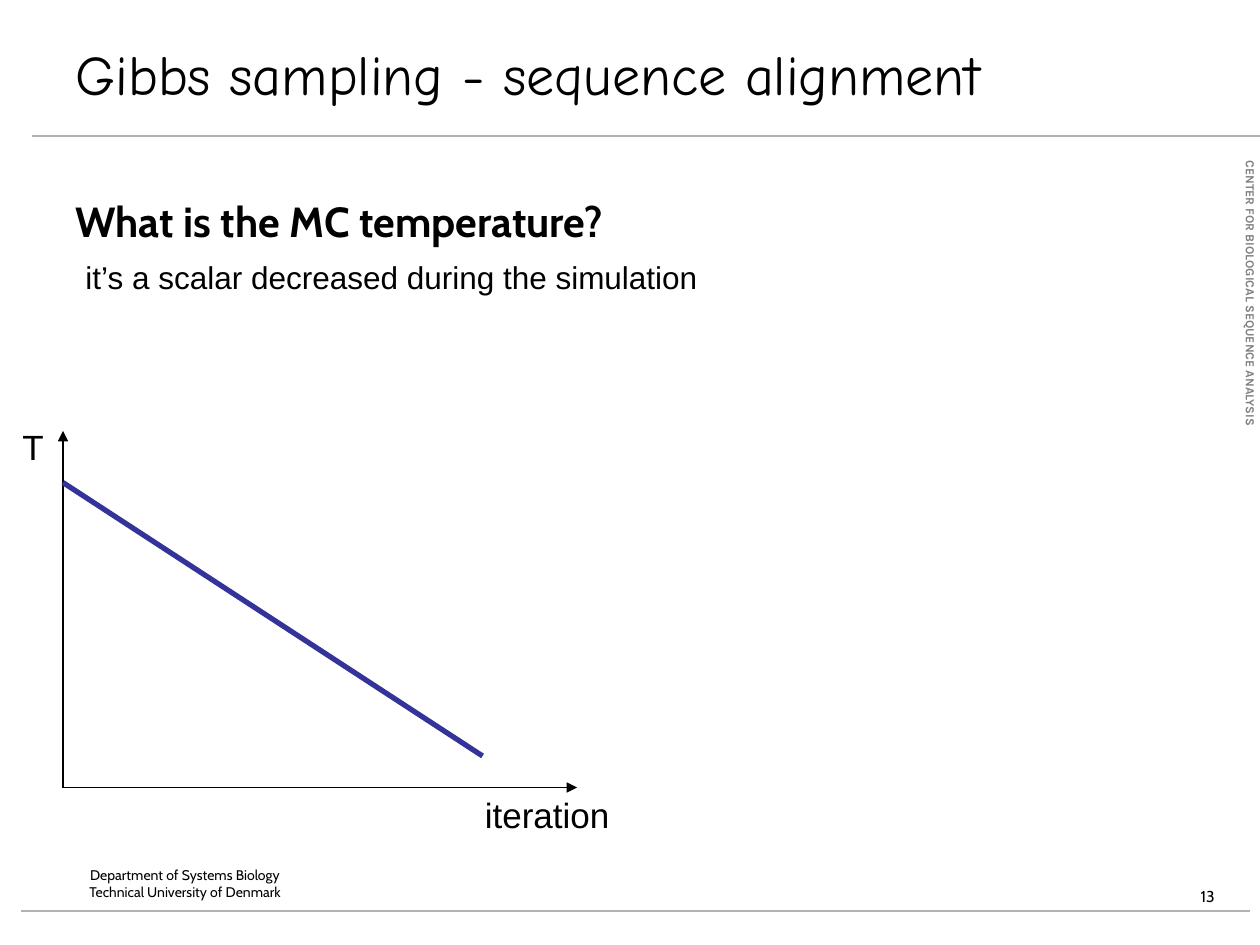
from dataclasses import dataclass

from lxml import etree
from pptx import Presentation
from pptx.dml.color import RGBColor
from pptx.enum.shapes import MSO_CONNECTOR, MSO_SHAPE
from pptx.enum.text import MSO_ANCHOR, MSO_AUTO_SIZE, PP_ALIGN
from pptx.oxml.ns import qn
from pptx.util import Inches, Pt

STRAIGHT = MSO_CONNECTOR.STRAIGHT
RECTANGLE = MSO_SHAPE.RECTANGLE
LEFT, CENTER = PP_ALIGN.LEFT, PP_ALIGN.CENTER
TOP, MIDDLE = MSO_ANCHOR.TOP, MSO_ANCHOR.MIDDLE
FIT_SHAPE = MSO_AUTO_SIZE.SHAPE_TO_FIT_TEXT

BLACK, WHITE = "000000", "FFFFFF"
RULE_GRAY, SIDE_GRAY, CURVE_BLUE = "B2B2B2", "808080", "333399"
ORIGIN = (0.5, 6.25)


@dataclass
class Line:
    start: tuple[float, float]
    end: tuple[float, float]
    color: str
    width: float
    arrow: bool = False


@dataclass
class Label:
    text: str
    box: tuple[float, float, float, float]
    font: str
    size: float
    color: str = BLACK
    bold: bool = False
    wrap: bool = True
    align: PP_ALIGN = LEFT
    rotation: float = 0
    margins: tuple[float, float] = (0.1, 0.05)


RULES = [
    Line((0.25, 1.08), (10, 1.08), RULE_GRAY, 1.5),
    Line((0.17, 7.23), (9.92, 7.23), RULE_GRAY, 1.5),
]
FRAME_LABELS = [
    Label("CENTER FOR BIOLOGICAL SEQUENCE ANALYSIS", (8.38, 2.72, 3.09, 0.14),
          "Karla", 7, SIDE_GRAY, bold=True, rotation=90, margins=(0.03, 0.01)),
    Label("Department of Systems Biology\nTechnical University of Denmark",
          (0.42, 6.83, 2.1, 0.5), "Cabin", 8, align=CENTER),
    Label("13", (9.43, 6.99, 0.39, 0.25), "Cabin", 9, wrap=False),
]
TITLE = Label("Gibbs sampling - sequence alignment", (0.5, 0.33, 8, 0.5),
              "Comic Neue", 32)
BODY_LABELS = [
    Label("What is the MC temperature?", (0.5, 1.5, 5.17, 0.51),
          "Cabin", 24, bold=True, wrap=False),
    Label("it’s a scalar decreased during the simulation",
          (0.58, 2, 5.11, 0.4), "Arial", 18, wrap=False),
]
GRAPH_LINES = [
    Line(ORIGIN, (0.5, 3.42), BLACK, 0.75, arrow=True),
    Line(ORIGIN, (4.58, 6.25), BLACK, 0.75, arrow=True),
    Line((0.5, 3.83), (3.83, 6), CURVE_BLUE, 3),
]
AXIS_LABELS = [
    Label("iteration", (3.75, 6.25, 1.5, 0.44), "Arial", 20),
    Label("T", (0.08, 3.33, 0.5, 0.44), "Arial", 20),
]


def rgb(color: str) -> RGBColor:
    return RGBColor.from_string(color)


def draw_line(slide, line: Line) -> None:
    points = [Inches(value) for value in (*line.start, *line.end)]
    connector = slide.shapes.add_connector(STRAIGHT, *points)
    connector.line.color.rgb = rgb(line.color)
    connector.line.width = Pt(line.width)
    if line.arrow:
        outline = connector.line._get_or_add_ln()
        etree.SubElement(outline, qn("a:tailEnd"), type="triangle")
    etree.SubElement(connector._element.spPr, qn("a:effectLst"))


def write_text(shape, label: Label, anchor: MSO_ANCHOR) -> None:
    frame = shape.text_frame
    frame.text = label.text
    frame.word_wrap = label.wrap
    frame.vertical_anchor = anchor
    across, down = (Inches(margin) for margin in label.margins)
    frame.margin_left = frame.margin_right = across
    frame.margin_top = frame.margin_bottom = down
    for paragraph in frame.paragraphs:
        paragraph.alignment = label.align
        for run in paragraph.runs:
            run.font.name = label.font
            run.font.size = Pt(label.size)
            run.font.bold = label.bold
            run.font.color.rgb = rgb(label.color)


def draw_label(slide, label: Label) -> None:
    box = slide.shapes.add_textbox(*(Inches(value) for value in label.box))
    box.rotation = label.rotation
    write_text(box, label, TOP)
    box.text_frame.auto_size = FIT_SHAPE


def draw_title(slide, label: Label) -> None:
    panel = slide.shapes.add_shape(
        RECTANGLE, *(Inches(value) for value in label.box))
    panel.shadow.inherit = False
    panel.fill.solid()
    panel.fill.fore_color.rgb = rgb(WHITE)
    panel.line.color.rgb = rgb(WHITE)
    panel.line.width = Pt(0.75)
    write_text(panel, label, MIDDLE)


def main() -> None:
    deck = Presentation()
    deck.slide_width, deck.slide_height = Inches(10), Inches(7.5)
    slide = deck.slides.add_slide(deck.slide_layouts[6])

    # Page frame: rules, side text, department and page number
    for rule in RULES:
        draw_line(slide, rule)
    for label in FRAME_LABELS:
        draw_label(slide, label)

    # Title and question
    draw_title(slide, TITLE)
    for label in BODY_LABELS:
        draw_label(slide, label)

    # Temperature against iteration
    for line in GRAPH_LINES:
        draw_line(slide, line)
    for label in AXIS_LABELS:
        draw_label(slide, label)

    deck.save("out.pptx")


if __name__ == "__main__":
    main()
